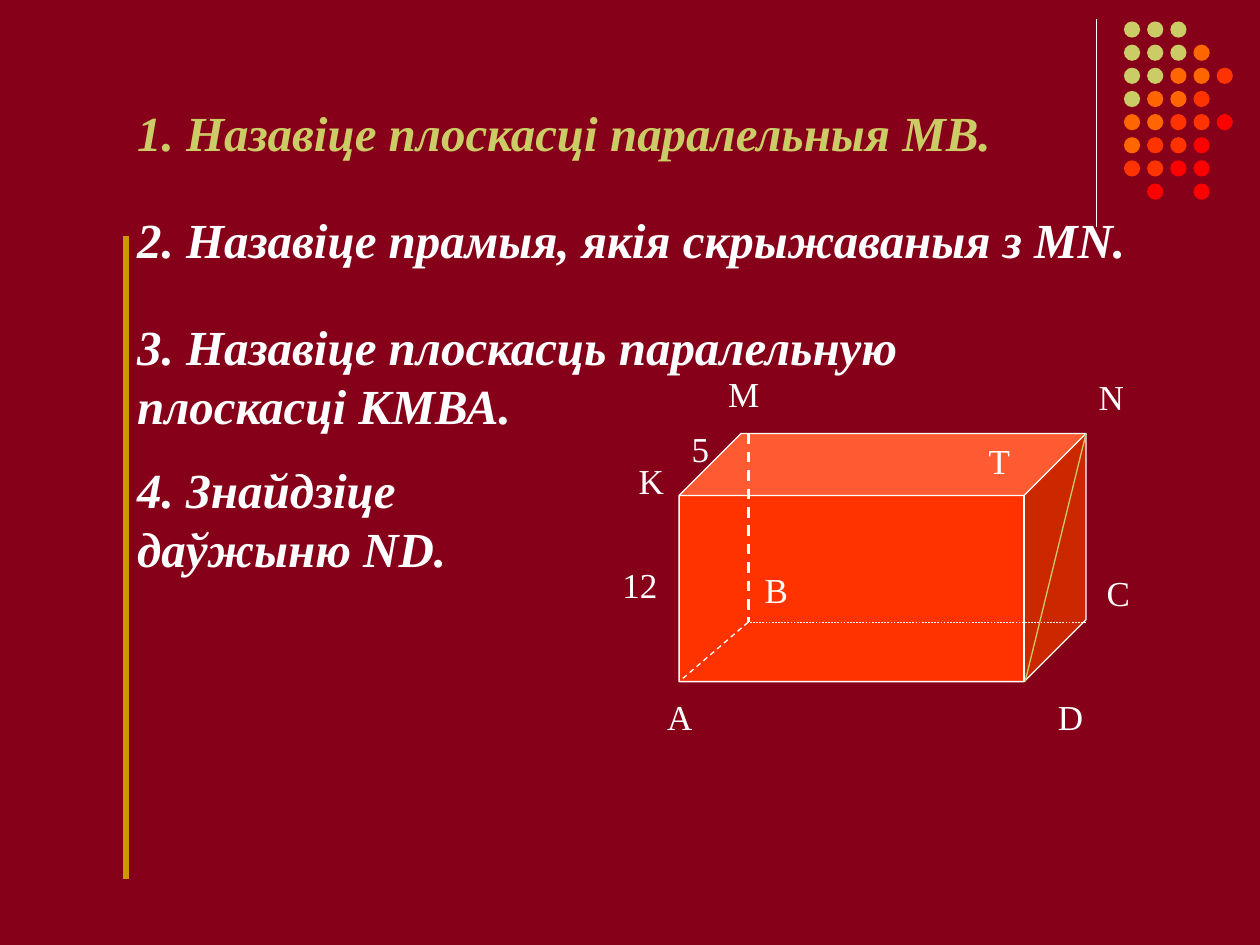
from dataclasses import dataclass

from lxml.etree import SubElement
from pptx import Presentation
from pptx.dml.color import RGBColor
from pptx.enum.dml import MSO_LINE
from pptx.enum.shapes import MSO_CONNECTOR, MSO_SHAPE
from pptx.enum.text import MSO_ANCHOR
from pptx.oxml.ns import qn
from pptx.util import Inches, Pt

FONT = "Times New Roman"
COLORS = {
    "ground": "86001A", "white": "FFFFFF", "olive": "CCCC66", "gold": "CC9900",
    "orange": "FF6600", "scarlet": "FF3300", "red": "FF0000",
}
DOT_COLORS = {"y": "olive", "o": "orange", "s": "scarlet", "r": "red"}
DOT_ROWS = ["yyy", "yyyo", "yyoos", "yoos", "oossr", "ossr", "ssrr", " r r"]
QUESTIONS = [
    ("1. Назавіце плоскасці паралельныя МВ.", 0, 1, 0.18, "olive"),
    ("2. Назавіце прамыя, якія скрыжаваныя з МN.", 0.25, 0.98, 0.14, "white"),
    ("3. Назавіце плоскасць паралельную плоскасці КМВА.", 0.46, 0.87, 0.26, "white"),
    ("4. Знайдзіце даўжыню ND.", 0.74, 0.44, 0.26, "white"),
]
CORNERS = {"M": (0.17, 0), "N": (1, 0), "A": (0, 1), "B": (0.17, 0.76),
           "C": (1, 0.76), "D": (0.85, 1)}
EDGES = [("M", "B", 1.5, "white", True), ("B", "A", 0.75, "white", True),
         ("C", "B", 0.25, "white", True), ("N", "D", 0.75, "olive", False)]
LABELS = [
    ("А", -0.06, 1.03, 0.12), ("В", 0.18, 0.52, 0.08), ("С", 1.02, 0.53, 0.12),
    ("D", 0.9, 1.03, 0.12), ("K", -0.13, 0.08, 0.12), ("M", 0.09, -0.27, 0.12),
    ("N", 1, -0.26, 0.12), ("T", 0.73, 0, 0.12), ("12", -0.17, 0.5, 0.16),
    ("5", 0, -0.05, 0.09),
]


@dataclass
class Box:
    """A region in inches, divided by shares of its width and height."""
    left: float
    top: float
    width: float
    height: float

    def point(self, x, y):
        """Return the place at the given shares."""
        return Inches(self.left + x * self.width), Inches(self.top + y * self.height)

    def size(self, x, y):
        """Return the lengths of the given shares."""
        return Inches(x * self.width), Inches(y * self.height)


def color(name):
    """Look up a colour by name."""
    return RGBColor.from_string(COLORS[name])


def add_line(slide, start, end, width, tint, dashed=False):
    """Draw a straight line without a shadow."""
    line = slide.shapes.add_connector(MSO_CONNECTOR.STRAIGHT, *start, *end)
    line.line.width = Pt(width)
    line.line.color.rgb = color(tint)
    if dashed:
        line.line.dash_style = MSO_LINE.DASH
    SubElement(line._element.spPr, qn("a:effectLst"))


def add_text(slide, place, size, wording, points, tint, emphasis=False):
    """Write wrapped text and return its frame."""
    frame = slide.shapes.add_textbox(*place, *size).text_frame
    frame.word_wrap = True
    frame.text = wording
    font = frame.paragraphs[0].runs[0].font
    font.name, font.size = FONT, Pt(points)
    font.bold = font.italic = emphasis
    font.color.rgb = color(tint)
    return frame


def add_dots(slide, box):
    """Fill the box with the pattern of coloured dots."""
    dots = slide.shapes.add_group_shape().shapes
    columns, rows = max(map(len, DOT_ROWS)), len(DOT_ROWS)
    diameter = Inches(0.7 * box.width / columns)
    for row, codes in enumerate(DOT_ROWS):
        for column, code in enumerate(codes):
            if code in DOT_COLORS:
                place = box.point(column / columns, row / rows)
                dot = dots.add_shape(MSO_SHAPE.OVAL, *place, diameter, diameter)
                dot.shadow.inherit = False
                dot.fill.solid()
                dot.fill.fore_color.rgb = color(DOT_COLORS[code])
                dot.line.fill.background()


def add_questions(slide, box):
    """Write the four questions down the box."""
    for number, (wording, top, width, height, tint) in enumerate(QUESTIONS):
        frame = add_text(slide, box.point(0, top), box.size(width, height),
                         wording, 28, tint, True)
        if number == 0:
            frame.vertical_anchor = MSO_ANCHOR.BOTTOM


def add_prism(slide, box):
    """Draw the prism with its hidden edges, diagonal and labels."""
    prism = slide.shapes.add_shape(MSO_SHAPE.CUBE, *box.point(0, 0), *box.size(1, 1))
    prism.adjustments[0] = 0.25
    prism.shadow.inherit = False
    prism.fill.solid()
    prism.fill.fore_color.rgb = color("scarlet")
    prism.line.color.rgb = color("white")
    prism.line.width = Pt(0.75)
    for start, end, width, tint, dashed in EDGES:
        add_line(slide, box.point(*CORNERS[start]), box.point(*CORNERS[end]),
                 width, tint, dashed)
    for letter, x, y, width in LABELS:
        add_text(slide, box.point(x, y), box.size(width, 0.22), letter, 20, "white")


def main():
    """Build the geometry slide and save it."""
    deck = Presentation()
    deck.slide_width, deck.slide_height = Inches(10), Inches(7.5)
    slide = deck.slides.add_slide(deck.slide_layouts[6])
    slide.background.fill.solid()
    slide.background.fill.fore_color.rgb = color("ground")
    page = Box(0, 0, 10, 7.5)
    add_line(slide, page.point(0.87, 0.02), page.point(0.87, 0.24), 0.75, "white")
    add_dots(slide, Box(8.92, 0.17, 0.92, 1.47))
    add_line(slide, page.point(0.1, 0.25), page.point(0.1, 0.93), 4, "gold")
    add_prism(slide, Box(5.39, 3.44, 3.23, 1.97))
    add_questions(slide, Box(0.99, 0.6, 8.25, 4.05))
    deck.save("out.pptx")


if __name__ == "__main__":
    main()
